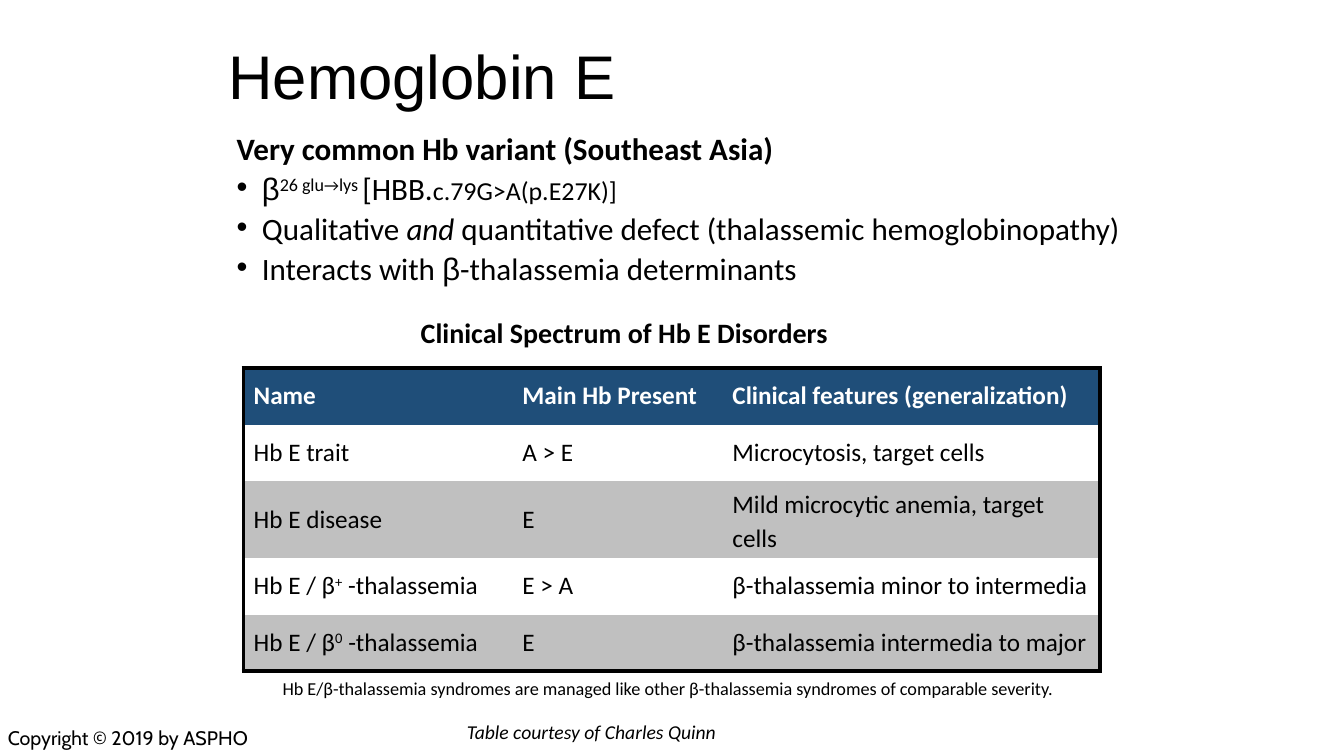
import pptx
import pptx.dml.color
import pptx.enum.text
import pptx.oxml
import pptx.oxml.ns
import pptx.util

BLACK = pptx.dml.color.RGBColor(0x00, 0x00, 0x00)
WHITE = pptx.dml.color.RGBColor(0xFF, 0xFF, 0xFF)
NAVY = pptx.dml.color.RGBColor(0x1F, 0x4E, 0x79)
SILVER = pptx.dml.color.RGBColor(0xC0, 0xC0, 0xC0)

COLS, ROWS = 160, 90
WIDTH, HEIGHT = pptx.util.Inches(13.33), pptx.util.Inches(7.5)
MIDDLE = pptx.enum.text.MSO_ANCHOR.MIDDLE
CENTER = pptx.enum.text.PP_ALIGN.CENTER
NO_GRID = "{2D5ABB26-0587-4C30-8999-92F81FD0307C}"

UP = {"baseline": 30000}
BETA = ("β", {"name": "Arial"})
BODY = [
    [("Very common Hb variant (Southeast Asia)", {"bold": True})],
    [BETA, ("26 glu", UP), ("→", {"size": 20.4, **UP}), ("lys ", UP),
     ("[HBB.", {}), ("c.79G>A(p.E27K)]", {"size": 18.5})],
    [("Qualitative ", {}), ("and", {"italic": True}),
     (" quantitative defect (thalassemic hemoglobinopathy)", {})],
    [("Interacts with ", {}), BETA, ("-thalassemia determinants", {})],
]

TABLE_COLS = [32, 25, 45]
TABLE_ROW = 6.75
TABLE = [
    ["Name", "Main Hb Present", "Clinical features (generalization)"],
    ["Hb E trait", "A > E", "Microcytosis, target cells"],
    ["Hb E disease", "E", "Mild microcytic anemia, target cells"],
    [[("Hb E / β", {}), ("+", UP), (" -thalassemia", {})],
     "E > A", "β-thalassemia minor to intermedia"],
    [[("Hb E / β", {}), ("0", UP), (" -thalassemia", {})],
     "E", "β-thalassemia intermedia to major"],
]


def col(n):
    return round(WIDTH * n / COLS)


def row(n):
    return round(HEIGHT * n / ROWS)


def add_runs(p, runs, **base):
    if isinstance(runs, str):
        runs = [(runs, {})]
    for text, changes in runs:
        r = p.add_run()
        r.text = text
        values = {"name": "Calibri", "color": BLACK, **base, **changes}
        r.font.color.rgb = values.pop("color")
        values["size"] = pptx.util.Pt(values["size"])
        if "baseline" in values:
            r.font._element.set("baseline", str(values.pop("baseline")))
        for key, value in values.items():
            setattr(r.font, key, value)


def add_text(s, x, y, w, h, paragraphs, wrap=True, anchor=None, layout=None, **base):
    sp = s.shapes.add_textbox(col(x), row(y), col(w), row(h))
    tf = sp.text_frame
    tf.word_wrap = wrap
    tf.vertical_anchor = anchor
    for i, runs in enumerate(paragraphs):
        p = tf.paragraphs[0] if i == 0 else tf.add_paragraph()
        for key, value in (layout or {}).items():
            setattr(p, key, value)
        add_runs(p, runs, **base)
    return tf


def add_bullet(p):
    pPr = p._p.get_or_add_pPr()
    indent = pptx.util.Inches(0.25)
    pPr.set("marL", str(indent))
    pPr.set("indent", str(-indent))
    ns = pptx.oxml.ns.nsdecls("a")
    for xml in (f'<a:buFont {ns} typeface="Arial"/>', f'<a:buChar {ns} char="•"/>'):
        pPr.append(pptx.oxml.parse_xml(xml))


def add_body(s):
    tf = add_text(s, 27, 16, 110, 20, BODY, layout={"line_spacing": 0.7}, size=22.2)
    for p in tf.paragraphs[1:]:
        p.space_before = pptx.util.Pt(10)
        add_bullet(p)


def add_border(cell, side):
    ns = pptx.oxml.ns.nsdecls("a")
    cell._tc.get_or_add_tcPr().append(pptx.oxml.parse_xml(
        f'<a:ln{side} {ns} w="{pptx.util.Pt(3)}"><a:solidFill>'
        f'<a:srgbClr val="{BLACK}"/></a:solidFill></a:ln{side}>'))


def add_disorder_table(s):
    last_row, last_col = len(TABLE) - 1, len(TABLE_COLS) - 1
    table = s.shapes.add_table(
        len(TABLE), len(TABLE_COLS), col(29), row(43.8),
        col(sum(TABLE_COLS)), row(TABLE_ROW * len(TABLE))).table
    table._tbl.tblPr.find(pptx.oxml.ns.qn("a:tableStyleId")).text = NO_GRID
    table.horz_banding = False
    for j, width in enumerate(TABLE_COLS):
        table.columns[j].width = col(width)
    for i, texts in enumerate(TABLE):
        table.rows[i].height = row(TABLE_ROW)
        header = i == 0
        fill = NAVY if header else WHITE if i % 2 else SILVER
        for j, runs in enumerate(texts):
            cell = table.cell(i, j)
            edges = {"L": j == 0, "R": j == last_col, "T": header, "B": i == last_row}
            for side, outer in edges.items():
                if outer:
                    add_border(cell, side)
            cell.fill.solid()
            cell.fill.fore_color.rgb = fill
            cell.vertical_anchor = MIDDLE
            add_runs(cell.text_frame.paragraphs[0], runs, size=18,
                     bold=header, color=WHITE if header else BLACK)
    table.cell(2, last_col).text_frame.paragraphs[0].line_spacing = 1.1


def main():
    prs = pptx.Presentation()
    prs.slide_width, prs.slide_height = WIDTH, HEIGHT
    s = prs.slides.add_slide(prs.slide_layouts[6])
    add_text(s, 26, 2, 108, 15, ["Hemoglobin E"], anchor=MIDDLE,
             layout={"line_spacing": 0.9}, name="Arial", size=44)
    add_body(s)
    add_disorder_table(s)
    add_text(s, 48.9, 37, 51.2, 5.25, ["Clinical Spectrum of Hb E Disorders"],
             wrap=False, size=20, bold=True)
    add_text(s, 31.4, 80, 96.1, 3.8,
             ["Hb E/β-thalassemia syndromes are managed like other "
              "β-thalassemia syndromes of comparable severity."],
             wrap=False, layout={"alignment": CENTER}, size=13)
    add_text(s, -0.25, 85.8, 40.8, 4, ["Copyright © 2019 by ASPHO"],
             name="Cabin", size=14)
    add_text(s, 54.4, 85.1, 37, 4, ["Table courtesy of Charles Quinn"],
             size=14, italic=True)
    prs.save("out.pptx")


if __name__ == "__main__":
    main()
